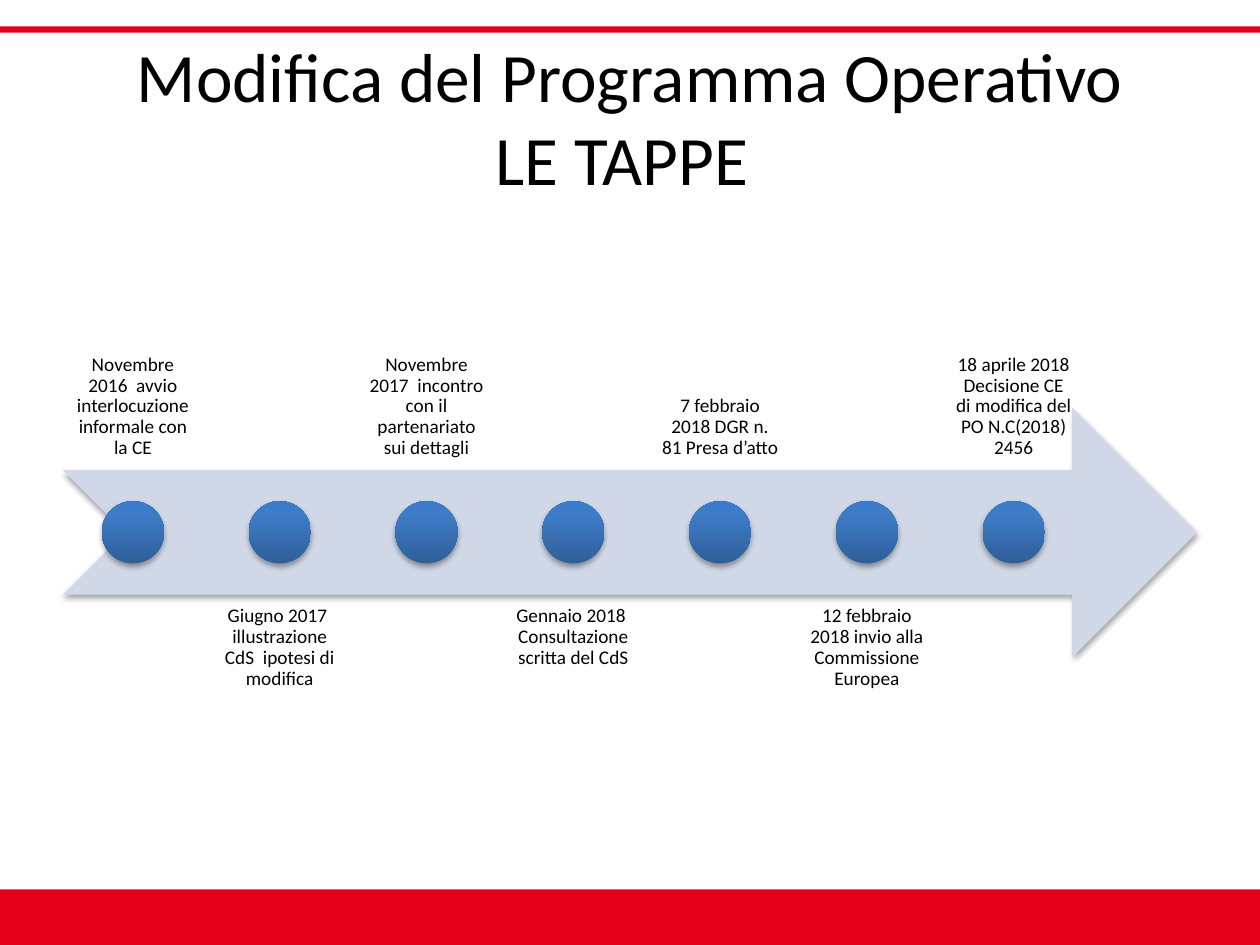
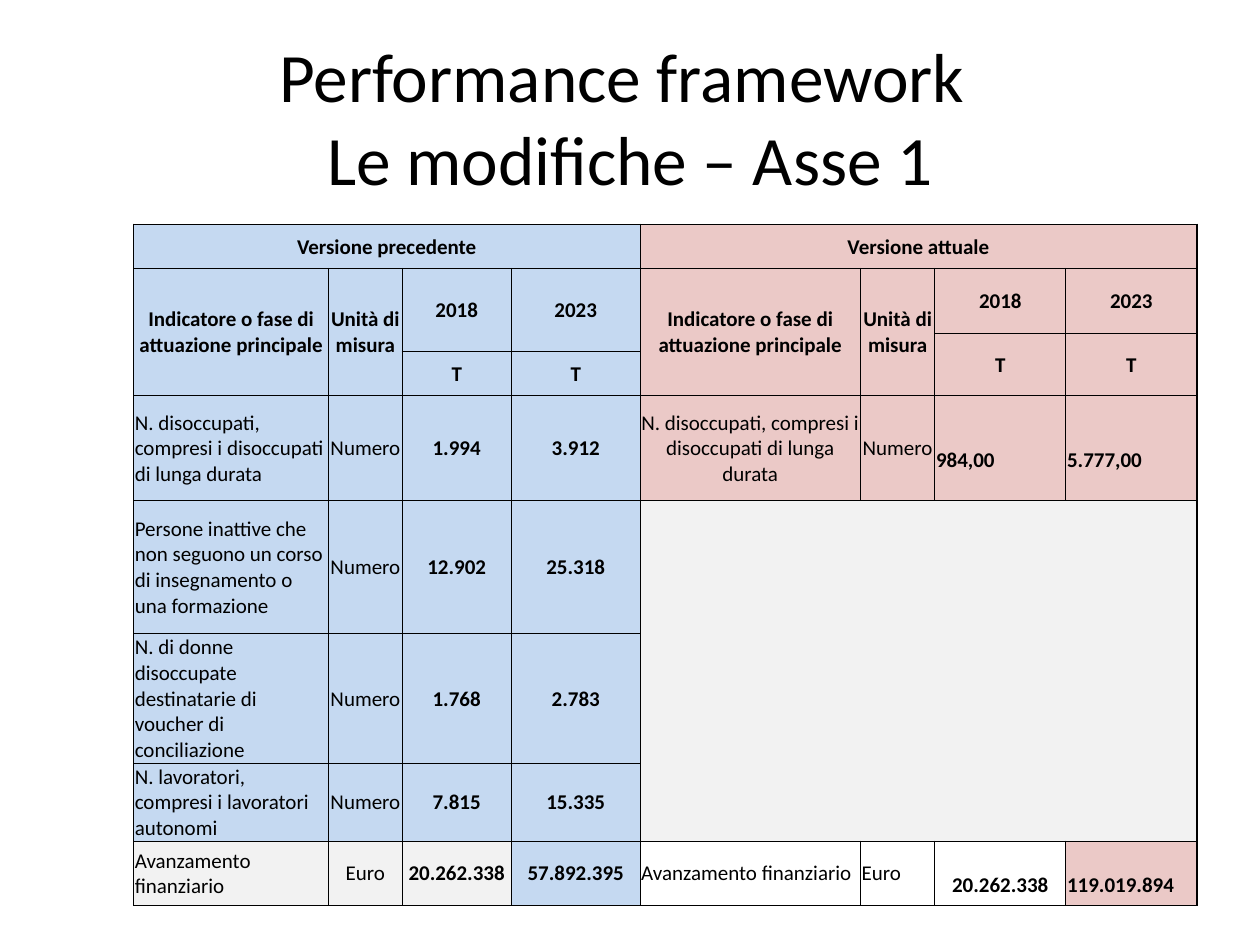
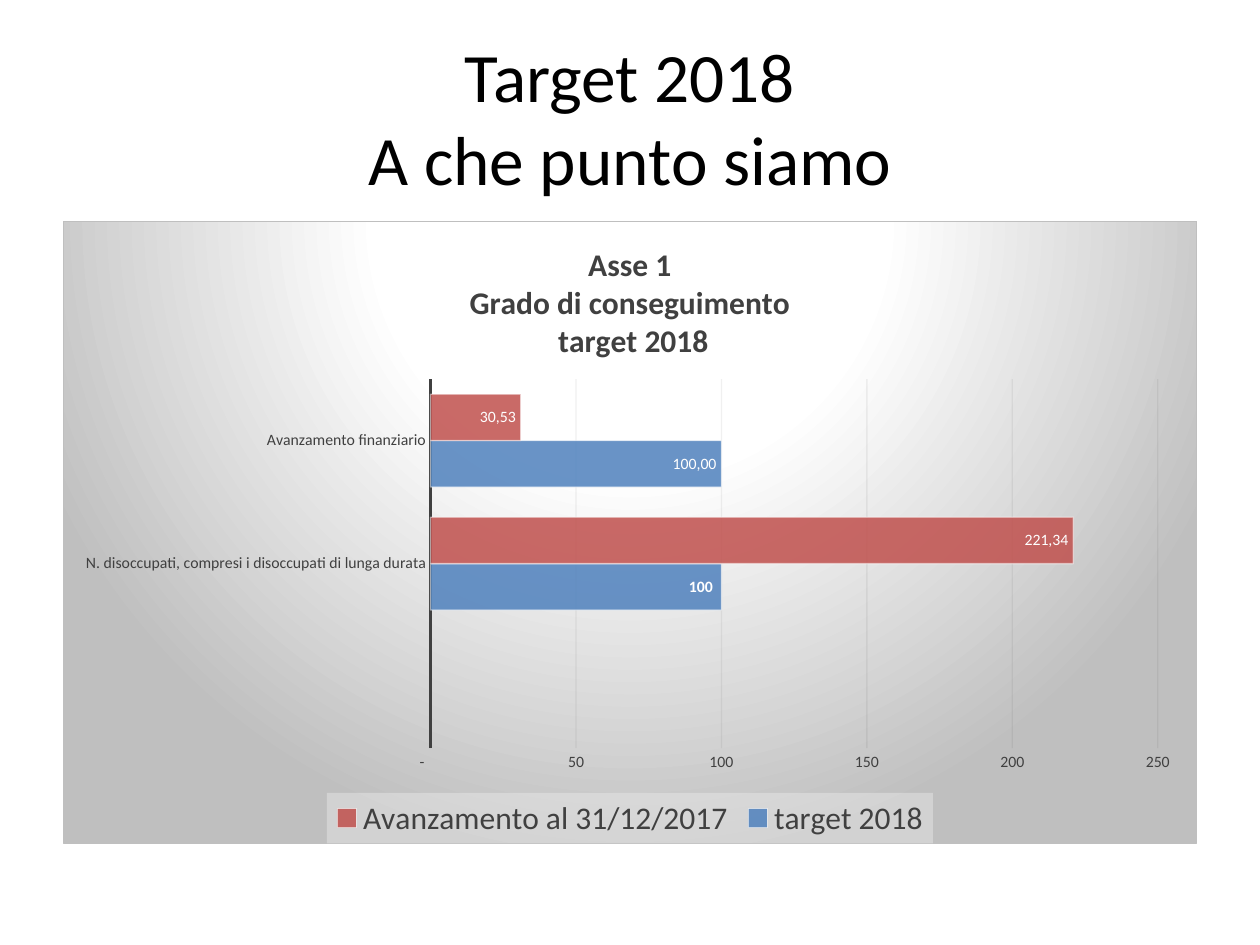
from pptx import Presentation
from pptx.chart.data import CategoryChartData
from pptx.dml.color import RGBColor
from pptx.enum.chart import XL_CHART_TYPE, XL_LABEL_POSITION, XL_LEGEND_POSITION, XL_TICK_MARK
from pptx.enum.shapes import MSO_SHAPE
from pptx.enum.text import MSO_ANCHOR, MSO_AUTO_SIZE, PP_ALIGN
from pptx.oxml import parse_xml
from pptx.oxml.ns import nsdecls, qn
from pptx.util import Inches, Pt

BLACK = RGBColor(0x00, 0x00, 0x00)
WHITE = RGBColor(0xFF, 0xFF, 0xFF)
RED = RGBColor(0xE2, 0x00, 0x1A)
PALE = RGBColor(0xD0, 0xD8, 0xE8)
BLUE = RGBColor(0xC5, 0xD9, 0xF1)
PINK = RGBColor(0xEB, 0xC9, 0xC7)
GREY = RGBColor(0xF2, 0xF2, 0xF2)
DARK = RGBColor(0x40, 0x40, 0x40)
EDGE = RGBColor(0xBF, 0xBF, 0xBF)
GRID = RGBColor(0x0D, 0x0D, 0x0D)
BAR_BLUE = RGBColor(0x4F, 0x81, 0xBD)
BAR_RED = RGBColor(0xC0, 0x50, 0x4D)
DOT = [(0, "2F5F99"), (80, "3D7CC7"), (100, "3A7CCB")]
GLOW = [(0, "FFFFFF"), (39, "FFFFFF"), (100, "BFBFBF")]
FONT = "Calibri"
WIDE, HIGH = 10, 7.5

# Content
TITLES = [
    "Modifica del Programma Operativo\vLE TAPPE ",
    "Performance framework \vLe modifiche – Asse 1",
    "Target 2018\vA che punto siamo",
]
STEPS = [
    "Novembre 2016  avvio interlocuzione informale con la CE",
    "Giugno 2017  illustrazione CdS  ipotesi di modifica",
    "Novembre 2017  incontro con il partenariato sui dettagli",
    "Gennaio 2018  Consultazione scritta del CdS",
    "7 febbraio 2018 DGR n. 81 Presa d’atto",
    "12 febbraio 2018 invio alla Commissione Europea",
    "18 aprile 2018 Decisione CE di modifica del PO N.C(2018) 2456",
]
PHASE, UNIT = "Indicatore o fase di attuazione principale", "Unità di misura"
JOBLESS = "N. disoccupati, compresi i disoccupati di lunga durata"
MONEY = "Avanzamento finanziario"
ROWS = [
    ["Versione precedente", "", "", "", "Versione attuale"],
    [PHASE, UNIT, "2018", "2023", PHASE, UNIT, "2018", "2023"],
    ["", "", "", "", "", "", "T", "T"],
    ["", "", "T", "T"],
    [JOBLESS, "Numero", "1.994", "3.912", JOBLESS, "Numero", "984,00", "5.777,00"],
    ["Persone inattive che non seguono un corso di insegnamento o una formazione",
     "Numero", "12.902", "25.318"],
    ["N. di donne disoccupate destinatarie di voucher di conciliazione",
     "Numero", "1.768", "2.783"],
    ["N. lavoratori, compresi i lavoratori autonomi", "Numero", "7.815", "15.335"],
    [MONEY, "Euro", "20.262.338", "57.892.395", MONEY, "Euro", "20.262.338", "119.019.894"],
]
COLS = [1.55, 0.58, 0.87, 1.02, 1.75, 0.59, 1.04, 1.04]
TALL = [0.35, 0.52, 0.14, 0.35, 0.83, 1.06, 0.8, 0.56, 0.51]
# Merged areas: first row, first column, last row, last column
SPANS = [(0, 0, 0, 3), (0, 4, 0, 7), (1, 0, 3, 0), (1, 1, 3, 1), (1, 2, 2, 2), (1, 3, 2, 3),
         (1, 4, 3, 4), (1, 5, 3, 5), (2, 6, 3, 6), (2, 7, 3, 7), (5, 4, 7, 7)]
TINTS = {(8, 0): GREY, (8, 1): GREY, (8, 2): GREY, (8, 4): WHITE, (8, 5): WHITE, (8, 6): WHITE,
         (5, 4): GREY}
LEFT = {(4, 6), (4, 7), (8, 4), (8, 5), (8, 7)}
LOW = {(4, 6), (4, 7), (8, 6), (8, 7)}

CHART_TITLE = "Asse 1\nGrado di conseguimento\n target 2018"
CATS = ["", JOBLESS, MONEY]
SERIES = [  # name, values, colour, labels written by hand
    ("target 2018", (None, 100, 100), BAR_BLUE, {2: "100,00"}),
    ("Avanzamento al 31/12/2017", (None, 221, 31), BAR_RED, {1: "221,34", 2: "30,53"}),
]
NUMBER = '_-* #,##0_-;\\-* #,##0_-;_-* "-"??_-;_-@_'


# Shared helpers
def put(obj, **vals):
    for name, val in vals.items():
        setattr(obj, name, val)


def style(font, size, color=BLACK, bold=False):
    put(font, size=Pt(size), name=FONT, bold=bold)
    font.color.rgb = color


def box(*nums):
    return [Inches(n) for n in nums]


def grad(stops, tail):
    marks = "".join(f'<a:gs pos="{at * 1000}"><a:srgbClr val="{tone}"/></a:gs>'
                    for at, tone in stops)
    return f'<a:gradFill {nsdecls("a")} rotWithShape="1"><a:gsLst>{marks}</a:gsLst>{tail}</a:gradFill>'


def fade(elem, share):
    for tone in elem.iter(qn("a:srgbClr")):
        tone.append(parse_xml(f'<a:alpha {nsdecls("a")} val="{share * 1000}"/>'))


def shape(slide, kind, at, fill):
    item = slide.shapes.add_shape(kind, *box(*at))
    item.shadow.inherit = False
    item.line.fill.background()
    item.fill.solid()
    item.fill.fore_color.rgb = fill
    return item


def shade(item):
    item._element.spPr.find(qn("a:effectLst")).append(parse_xml(
        f'<a:outerShdw {nsdecls("a")} blurRad="40000" dist="23000" dir="5400000" rotWithShape="0">'
        '<a:srgbClr val="000000"><a:alpha val="35000"/></a:srgbClr></a:outerShdw>'))


def start(deck, text):
    slide = deck.slides.add_slide(deck.slide_layouts[5])
    title = slide.shapes.title
    put(title, **dict(zip(("left", "top", "width", "height"), box(0.5, 0.3, 9, 1.25))))
    frame = title.text_frame
    put(frame, text=text, auto_size=MSO_AUTO_SIZE.NONE, vertical_anchor=MSO_ANCHOR.MIDDLE)
    para = frame.paragraphs[0]
    para.alignment = PP_ALIGN.CENTER
    for run in para.runs:
        style(run.font, 39.6)
    return slide


# Timeline
def stages(slide):
    shape(slide, MSO_SHAPE.RECTANGLE, (0, 7.06, WIDE, 0.44), RED)
    shape(slide, MSO_SHAPE.RECTANGLE, (0, 0.21, WIDE, 0.05), RED)
    left, top, band = 0.5, 1.75, 1.98
    wide, step, size = 1.11, 1.165, band / 4
    shade(shape(slide, MSO_SHAPE.NOTCHED_RIGHT_ARROW, (left, top + 0.75 * band, 9, band), PALE))
    for i, text in enumerate(STEPS):
        x, below = left + i * step, i % 2
        note = slide.shapes.add_textbox(*box(x, top + 1.5 * band * below, wide, band))
        frame = note.text_frame
        put(frame, text=text, word_wrap=True,
            vertical_anchor=MSO_ANCHOR.TOP if below else MSO_ANCHOR.BOTTOM)
        for side in ("left", "right", "top", "bottom"):
            setattr(frame, "margin_" + side, Inches(0.09))
        para = frame.paragraphs[0]
        put(para, alignment=PP_ALIGN.CENTER, line_spacing=0.9)
        style(para.runs[0].font, 11)
        dot = shape(slide, MSO_SHAPE.OVAL,
                    (x + (wide - size) / 2, top + 1.125 * band, size, size), PALE)
        fill = dot._element.spPr.find(qn("a:solidFill"))
        fill.getparent().replace(fill, parse_xml(grad(DOT, '<a:lin ang="16200000" scaled="0"/>')))
        shade(dot)


# Table of targets
def border(cell, sides):
    props = cell._tc.get_or_add_tcPr()
    for side, width in sides.items():
        props.append(parse_xml(
            f'<a:ln{side} {nsdecls("a")} w="{Pt(width)}"><a:solidFill>'
            f'<a:srgbClr val="{BLACK}"/></a:solidFill></a:ln{side}>'))


def targets(slide):
    rows, cols = len(TALL), len(COLS)
    grid = slide.shapes.add_table(rows, cols, *box(1.06, 1.78, sum(COLS), sum(TALL))).table
    put(grid, first_row=False, horz_banding=False)
    for col, wide in zip(grid.columns, COLS):
        col.width = Inches(wide)
    for row, high in zip(grid.rows, TALL):
        row.height = Inches(high)
    for r, c, low, far in SPANS:
        grid.cell(r, c).merge(grid.cell(low, far))
    for r in range(rows):
        for c in range(cols):
            cell, spot = grid.cell(r, c), (r, c)
            far = c + (cell.span_width if cell.is_merge_origin else 1)
            border(cell, {"L": 0.5, "R": 1 if far == cols else 0.5,
                          "T": 0.5 if r else 1, "B": 1 if r == rows - 1 else 0.5})
            cell.fill.solid()
            cell.fill.fore_color.rgb = TINTS.get(spot, BLUE if c < 4 else PINK)
            put(cell, vertical_anchor=MSO_ANCHOR.MIDDLE, margin_left=Inches(0.01),
                margin_right=Inches(0.01), margin_bottom=0,
                margin_top=Inches(0.2 if spot in LOW else 0.01))
            para = cell.text_frame.paragraphs[0]
            left = spot in LEFT or (c == 0 and r > 3)
            para.alignment = PP_ALIGN.LEFT if left else PP_ALIGN.CENTER
            style(para.font, 12)
            if c < len(ROWS[r]) and ROWS[r][c]:
                run = para.add_run()
                run.text = ROWS[r][c]
                style(run.font, 12, bold=r < 4 or c % 4 > 1)


# Chart of progress
def place(elem, **share):
    old = elem.find(qn("c:layout"))
    if old is not None:
        elem.remove(old)
    inner = '<c:layoutTarget val="inner"/>' if "w" in share else ""
    modes = "".join(f'<c:{key}Mode val="edge"/>' for key in "xy")
    sizes = "".join(f'<c:{key} val="{val}"/>' for key, val in share.items())
    elem.insert(0 if elem.find(qn("c:tx")) is None else 1, parse_xml(
        f'<c:layout {nsdecls("c")}><c:manualLayout>{inner}{modes}{sizes}'
        '</c:manualLayout></c:layout>'))


def look(fill, line=""):
    return parse_xml(f'<c:spPr {nsdecls("c", "a")}>{fill}{line}</c:spPr>')


def progress(slide):
    data = CategoryChartData()
    data.categories = CATS
    for name, vals, *_ in SERIES:
        data.add_series(name, vals)
    chart = slide.shapes.add_chart(XL_CHART_TYPE.BAR_CLUSTERED, *box(0.5, 1.75, 9, 4.95), data).chart
    style(chart.font, 10)

    # Title, legend and backgrounds
    chart.has_title = chart.has_legend = True
    head = chart.chart_title.text_frame
    head.text = CHART_TITLE
    for para in head.paragraphs:
        para.alignment = PP_ALIGN.CENTER
        style(para.runs[0].font, 18, DARK, True)
    body = chart.element.find(qn("c:chart"))
    area = body.find(qn("c:plotArea"))
    place(body.find(qn("c:title")), x=0.355, y=0.03)
    place(area, x=0.324, y=0.254, w=0.642, h=0.593)
    area.append(look("<a:noFill/>"))
    glow = grad(GLOW, '<a:path path="circle"><a:fillToRect l="50000" t="-80000" r="50000" '
                      'b="180000"/></a:path>')
    body.addnext(look(glow, f'<a:ln w="{Pt(0.75)}"><a:solidFill><a:srgbClr val="{EDGE}"/>'
                            '</a:solidFill></a:ln>'))
    legend = chart.legend
    put(legend, position=XL_LEGEND_POSITION.BOTTOM, include_in_layout=False)
    style(legend.font, 18, DARK)
    panel = look(f'<a:solidFill><a:srgbClr val="{GREY}"/></a:solidFill>')
    fade(panel, 39)
    legend._element.find(qn("c:txPr")).addprevious(panel)

    # Axes
    cat, val = chart.category_axis, chart.value_axis
    for axis in (cat, val):
        put(axis, major_tick_mark=XL_TICK_MARK.NONE, minor_tick_mark=XL_TICK_MARK.NONE)
        style(axis.tick_labels.font, 9, DARK)
    cat.format.line.width = Pt(1.5)
    cat.format.line.color.rgb = DARK
    put(val, minimum_scale=0, maximum_scale=250, major_unit=50, has_major_gridlines=True)
    put(val.tick_labels, number_format=NUMBER, number_format_is_linked=False)
    val.format.line.fill.background()
    rule = val.major_gridlines.format.line
    rule.width = Pt(0.75)
    rule.color.rgb = GRID
    fade(val._element.find(qn("c:majorGridlines")), 6)

    # Bars and their labels
    plot = chart.plots[0]
    put(plot, gap_width=65, overlap=0, vary_by_categories=False)
    for bars, (_, _, color, notes) in zip(plot.series, SERIES):
        bars.format.fill.solid()
        bars.format.fill.fore_color.rgb = color
        fade(bars._element.find(qn("c:spPr")), 85)
        edge = bars.format.line
        edge.width = Pt(0.75)
        edge.color.rgb = WHITE
        fade(bars._element.find(qn("c:spPr")).find(qn("a:ln")), 50)
        labels = bars.data_labels
        put(labels, show_value=True, position=XL_LABEL_POSITION.INSIDE_END,
            number_format=NUMBER, number_format_is_linked=False)
        style(labels.font, 9, WHITE, True)
        for i, text in notes.items():
            label = bars.points[i].data_label
            label.text_frame.text = text
            style(label.text_frame.paragraphs[0].runs[0].font, 9, WHITE)
            label.position = XL_LABEL_POSITION.INSIDE_END


def main():
    deck = Presentation()
    put(deck, slide_width=Inches(WIDE), slide_height=Inches(HIGH))
    for text, draw in zip(TITLES, (stages, targets, progress)):
        draw(start(deck, text))
    deck.save("out.pptx")


if __name__ == "__main__":
    main()
